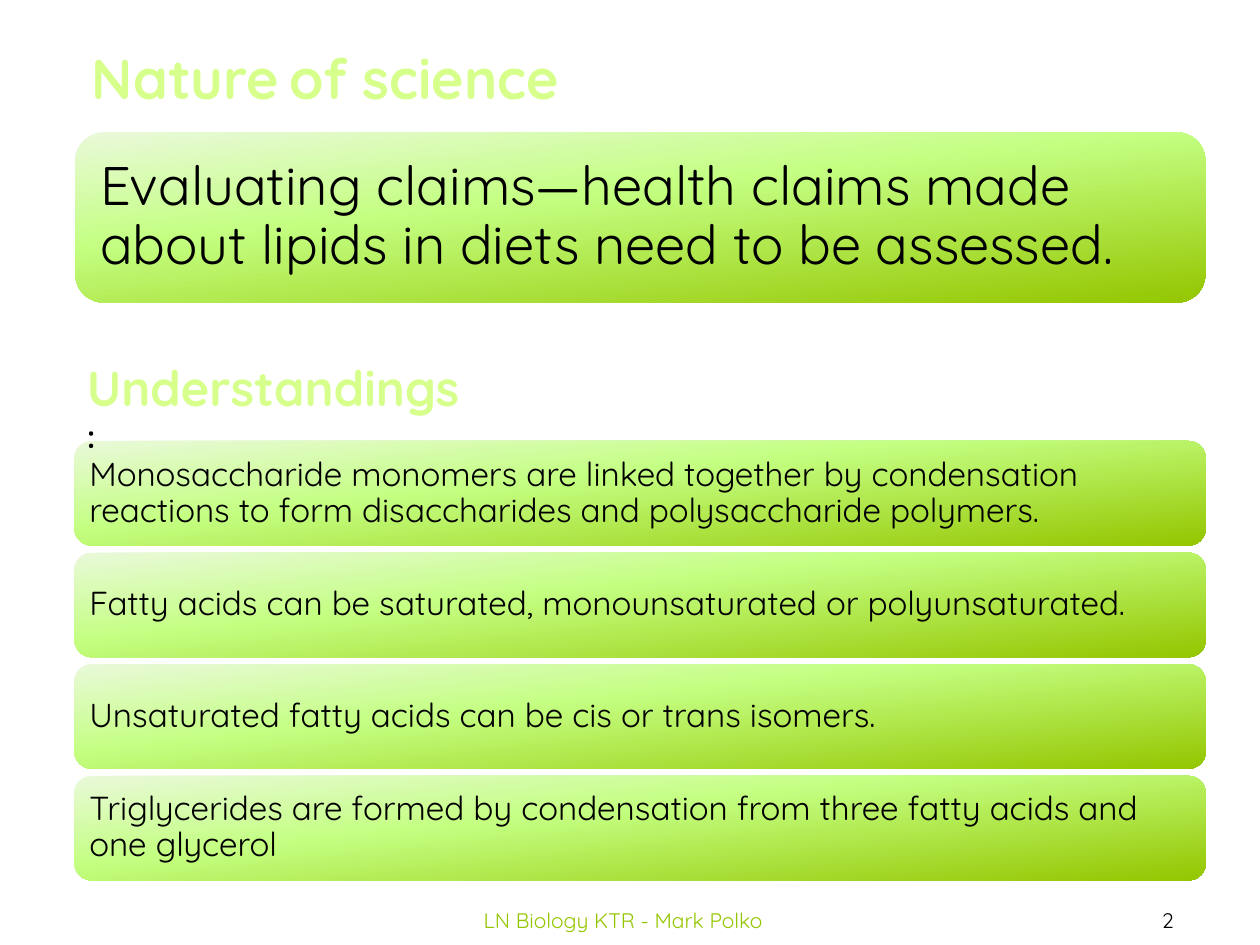
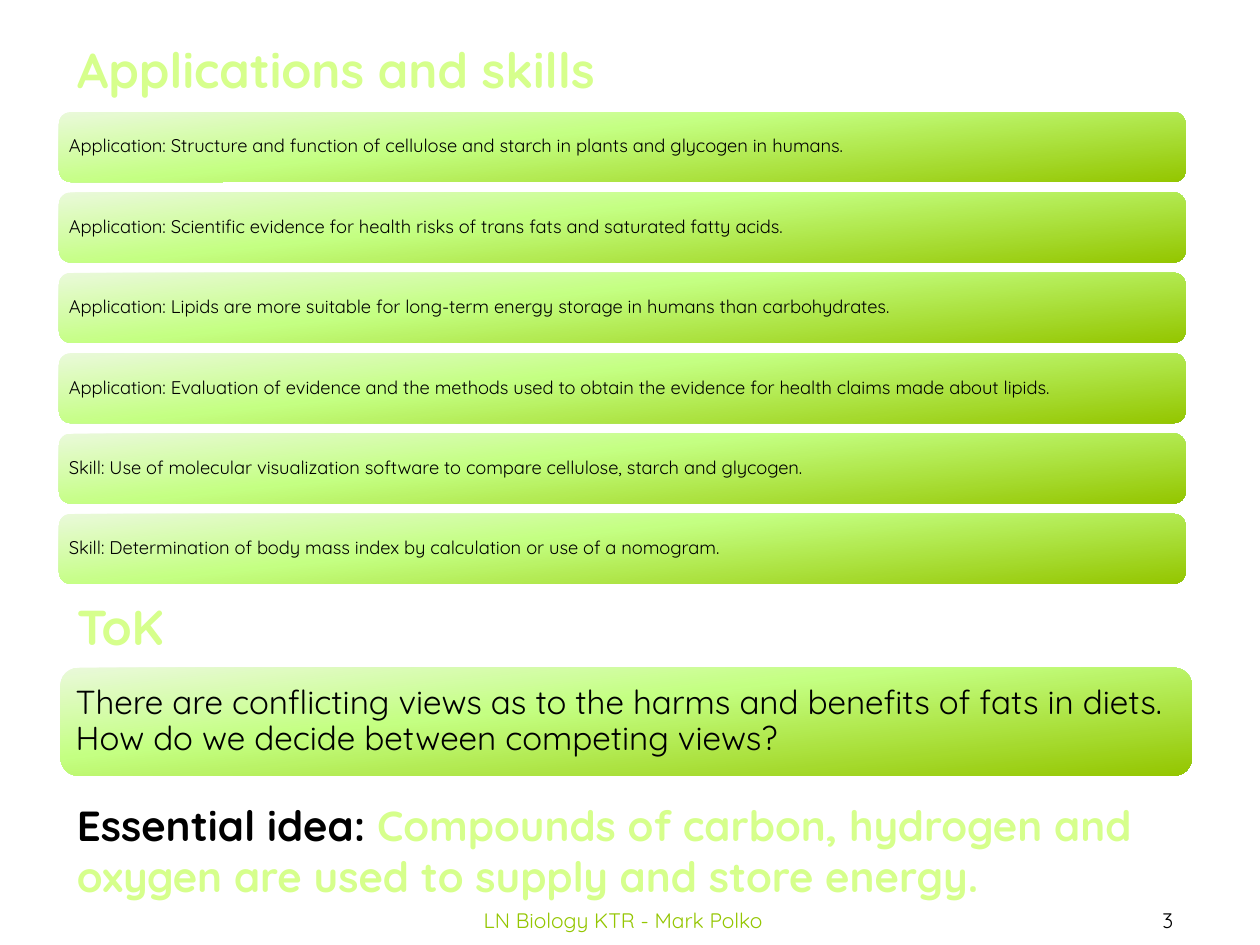
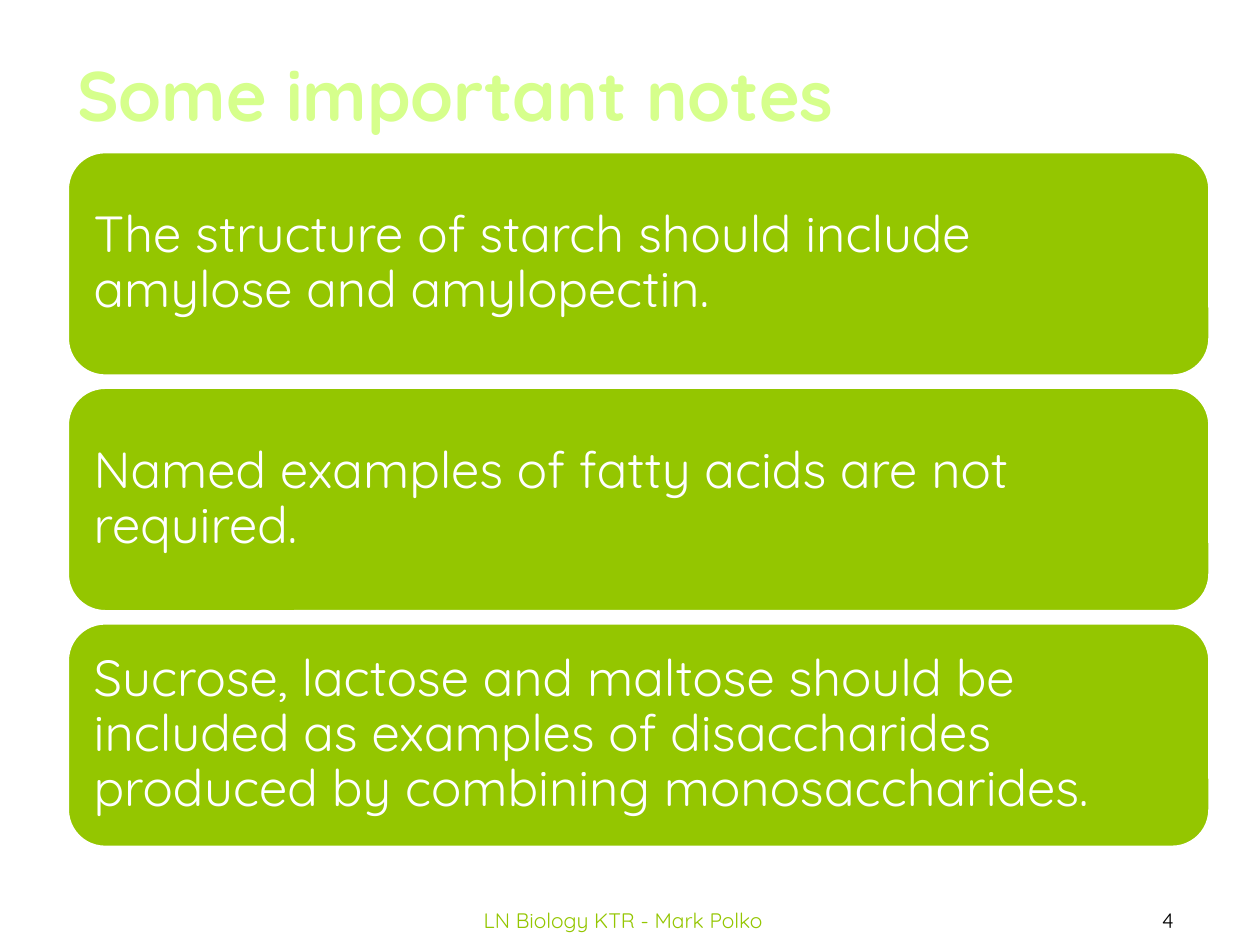
from pptx import Presentation, util as u
from pptx.dml.color import RGBColor
from pptx.enum import shapes, text
from pptx.oxml import parse_xml
from pptx.oxml.ns import nsdecls

FONT = "Quicksand"
COLORS = {"heading": "D6FF8C", "green": "94C600", "mid": "C4FF82",
          "pale": "EAF9DA", "black": "000000", "white": "FFFFFF"}
GRADIENT = [(0, "pale"), (40, "mid"), (100, "green")]
GRADIENT_ANGLE = 84

FOOTER = "LN Biology KTR - Mark Polko"
FOOTER_BOX = (7.7, 18.03, 9.73, 1.02)
NUMBER_BOX = (21.69, 18.03, 3.71, 1.02)
FIRST_NUMBER = 2

# Boxes are left, top, width, height in cm; runs are text, size, colour, bold.
# A stack's box is its first card, and pitch is the step from card to card.
SLIDES = [
    {"title": {"box": (1.47, 0.74, 10.19, 1.63), "centred": True,
               "runs": [("Nature", 32, "heading", True),
                        (" ", 20, "black", True),
                        ("of science", 32, "heading", True)]},
     "headings": [
         {"box": (1.5, 7.09, 8.13, 1.45),
          "runs": [("Understandings", 28, "heading", True),
                   (":", 18, "black", True)]}],
     "stacks": [
         {"box": (1.52, 2.67, 22.78, 3.43), "pitch": 0, "inset": 0.33, "size": 31,
          "cards": ["Evaluating claims—health claims made about lipids in diets "
                    "need to be assessed."]},
         {"box": (1.5, 8.89, 22.81, 2.11), "pitch": 2.25, "inset": 0.2, "size": 19,
          "cards": [
              "Monosaccharide monomers are linked together by condensation "
              "reactions to form disaccharides and polysaccharide polymers.",
              "Fatty acids can be saturated, monounsaturated or polyunsaturated.",
              "Unsaturated fatty acids can be cis or trans isomers.",
              "Triglycerides are formed by condensation from three fatty acids "
              "and one glycerol"]}]},
    {"title": {"box": (1.3, 0.66, 12.19, 1.45),
               "runs": [("Applications and skills", 28, "heading", True)]},
     "headings": [
         {"box": (1.3, 11.91, 12.19, 1.45),
          "runs": [("ToK", 28, "heading", True)]},
         {"box": (1.3, 16, 22.94, 2.31),
          "runs": [("Essential idea:", 24, "black", True),
                   (" Compounds of carbon, hydrogen and oxygen are used to "
                    "supply and store energy.", 24, "heading", True)]}],
     "stacks": [
         {"box": (1.19, 2.26, 22.71, 1.41), "pitch": 1.62, "inset": 0.13, "size": 10.5,
          "cards": [
              "Application: Structure and function of cellulose and starch in "
              "plants and glycogen in humans.",
              "Application: Scientific evidence for health risks of trans fats "
              "and saturated fatty acids.",
              "Application: Lipids are more suitable for long-term energy "
              "storage in humans than carbohydrates.",
              "Application: Evaluation of evidence and the methods used to obtain "
              "the evidence for health claims made about lipids.",
              "Skill: Use of molecular visualization software to compare "
              "cellulose, starch and glycogen.",
              "Skill: Determination of body mass index by calculation or use of "
              "a nomogram."]},
         {"box": (1.22, 13.46, 22.81, 2.18), "pitch": 0, "inset": 0.2, "size": 19,
          "cards": ["There are conflicting views as to the harms and benefits of "
                    "fats in diets. How do we decide between competing views?"]}]},
    {"title": {"box": (1.3, 0.91, 18.01, 1.96),
               "runs": [("Some important notes", 40, "heading", True)]},
     "headings": [],
     "stacks": [
         {"box": (1.37, 3.07, 23.01, 4.5), "pitch": 4.75, "inset": 0.3, "size": 29,
          "solid": True,
          "cards": [
              "The structure of starch should include amylose and amylopectin.",
              "Named examples of fatty acids are not required.",
              "Sucrose, lactose and maltose should be included as examples of "
              "disaccharides produced by combining monosaccharides."]}]},
]


def rgb(name):
    return RGBColor.from_string(COLORS[name])


def cm(box):
    return [u.Cm(v) for v in box]


def write(sp, runs, middle=False, centred=False, inset=None, spacing=1.0):
    tf = sp.text_frame
    frame = {"word_wrap": True, "auto_size": text.MSO_AUTO_SIZE.NONE,
             "vertical_anchor": text.MSO_ANCHOR.MIDDLE if middle else text.MSO_ANCHOR.TOP}
    if inset is not None:
        for side in ("left", "top", "right", "bottom"):
            frame[f"margin_{side}"] = u.Cm(inset)
    for key, value in frame.items():
        setattr(tf, key, value)
    p = tf.paragraphs[0]
    p.alignment = text.PP_ALIGN.CENTER if centred else text.PP_ALIGN.LEFT
    p.line_spacing = spacing
    for words, size, color, bold in runs:
        r = p.add_run()
        r.text = words
        for key, value in {"name": FONT, "size": u.Pt(size), "bold": bold}.items():
            setattr(r.font, key, value)
        r.font.color.rgb = rgb(color)


def add_text(slide, box, runs, **layout):
    write(slide.shapes.add_textbox(*cm(box)), runs, **layout)


def fill_gradient(sp):
    stops = "".join(f'<a:gs pos="{pos * 1000}"><a:srgbClr val="{COLORS[name]}"/></a:gs>'
                    for pos, name in GRADIENT)
    grad = parse_xml(f'<a:gradFill {nsdecls("a")} rotWithShape="1"><a:gsLst>{stops}</a:gsLst>'
                     f'<a:lin ang="{GRADIENT_ANGLE * 60000}" scaled="0"/></a:gradFill>')
    sp._element.spPr.find("{*}prstGeom").addnext(grad)


def add_stack(slide, box, pitch, inset, size, cards, solid=False):
    left, top, width, height = box
    for i, words in enumerate(cards):
        sp = slide.shapes.add_shape(shapes.MSO_SHAPE.ROUNDED_RECTANGLE,
                                    *cm((left, top + i * pitch, width, height)))
        sp.shadow.inherit = False
        if solid:
            sp.fill.solid()
            sp.fill.fore_color.rgb = rgb("green")
            sp.line.color.rgb = rgb("white")
            sp.line.width = u.Pt(1.25)
        else:
            fill_gradient(sp)
            sp.line.fill.background()
        write(sp, [(words, size, "white" if solid else "black", False)],
              middle=True, inset=inset, spacing=0.9)


def set_title(slide, box, runs, centred=False):
    title = slide.shapes.title
    for key, value in zip(("left", "top", "width", "height"), cm(box)):
        setattr(title, key, value)
    write(title, runs, centred=centred)


def add_footer(slide, number):
    for box, words, color in ((NUMBER_BOX, str(number), "black"),
                              (FOOTER_BOX, FOOTER, "green")):
        add_text(slide, box, [(words, 12, color, False)], middle=True, centred=True)


def main():
    prs = Presentation()
    prs.slide_width, prs.slide_height = u.Cm(25.4), u.Cm(19.05)
    for number, content in enumerate(SLIDES, FIRST_NUMBER):
        slide = prs.slides.add_slide(prs.slide_layouts[5])
        add_footer(slide, number)
        set_title(slide, **content["title"])
        for stack in content["stacks"]:
            add_stack(slide, **stack)
        for heading in content["headings"]:
            add_text(slide, **heading)
    prs.save("out.pptx")


if __name__ == "__main__":
    main()
